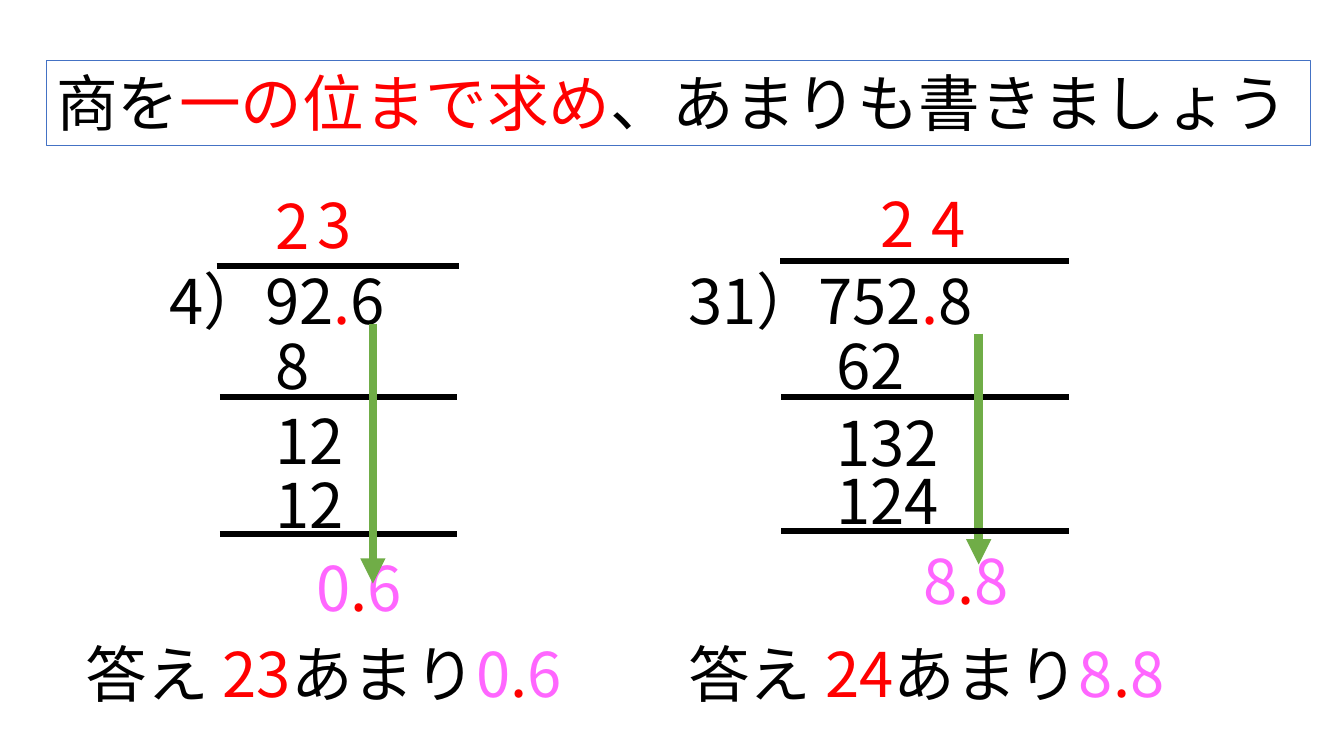
from pptx import Presentation
from pptx.dml.color import RGBColor
from pptx.enum.shapes import MSO_CONNECTOR
from pptx.oxml.ns import qn
from pptx.util import Pt
from lxml import etree

FONT = "Noto Sans CJK JP"
BLACK, RED, PINK, GREEN, BLUE = "000000", "FF0000", "FF66FF", "70AD47", "4472C4"
ROW_HEIGHT = 60.5
DIVIDEND_TOP = 184.3

deck = Presentation()
deck.slide_width, deck.slide_height = Pt(960), Pt(540)
slide = deck.slides.add_slide(deck.slide_layouts[6])


def write(left, top, width, *pieces):
    box = slide.shapes.add_textbox(Pt(left), Pt(top), Pt(width), Pt(ROW_HEIGHT))
    box.text_frame.word_wrap = True
    paragraph = box.text_frame.paragraphs[0]
    paragraph.line_spacing = Pt(52.5)
    paragraph.font.size = Pt(44)
    paragraph.font.name = FONT
    etree.SubElement(paragraph.font._element, qn("a:ea"), typeface=FONT)
    for words, color in pieces:
        run = paragraph.add_run()
        run.text = words
        run.font.color.rgb = RGBColor.from_string(color)
    return box


def draw_line(x1, y1, x2, y2, color=BLACK, weight=4.5):
    line = slide.shapes.add_connector(
        MSO_CONNECTOR.STRAIGHT, Pt(x1), Pt(y1), Pt(x2), Pt(y2))
    line.line.color.rgb = RGBColor.from_string(color)
    line.line.width = Pt(weight)
    etree.SubElement(line._element.spPr, qn("a:effectLst"))
    return line


instruction = write(33, 43.2, 903, ("商を", BLACK), ("一の位まで求め", RED),
                    ("、あまりも書きましょう", BLACK))
instruction.line.color.rgb = RGBColor.from_string(BLUE)
instruction.line.width = Pt(0.75)

divisions = [
    {
        "dividend": (113.8, "4）92", "6"),
        "quotient": [(189.4, 131, "2"), (219.6, 130.3, "3")],
        "steps": [(189.4, 231.1, 46, "8"), (189.4, 284.4, 77, "12"),
                  (189.4, 330.5, 77, "12")],
        "remainder": (218.9, 389.5, "0", "6"),
        "answer": (54, "23"),
        "rules_under": [(154.8, 190.1, 327.6), (157, 283.7, 326.2),
                        (157, 381.6, 326.2)],
        "arrow": (266.4, 231.1, 416.9),
        "rules_over": [],
    },
    {
        "dividend": (484.6, "31）752", "8"),
        "quotient": [(622.1, 129.6, "2"), (658.1, 129.6, "4")],
        "steps": [(590.4, 231.1, 77, "62"), (590.4, 285.8, 109.4, "132"),
                  (590.4, 327.6, 109.4, "124")],
        "remainder": (652.3, 384.5, "8", "8"),
        "answer": (484.6, "24"),
        "rules_under": [(557.3, 186.5, 763.9), (558, 283.7, 763.9)],
        "arrow": (699.1, 238.3, 403.2),
        "rules_over": [(558, 379.4, 763.9)],
    },
]

for division in divisions:
    for start, y, end in division["rules_under"]:
        draw_line(start, y, end, y)

    left, whole, tenths = division["dividend"]
    write(left, DIVIDEND_TOP, 264, (whole, BLACK), (".", RED), (tenths, BLACK))
    for left, top, digit in division["quotient"]:
        write(left, top, 46, (digit, RED))
    for left, top, width, number in division["steps"]:
        write(left, top, width, (number, BLACK))

    left, top, whole, tenths = division["remainder"]
    remainder = (whole, PINK), (".", RED), (tenths, PINK)
    write(left, top, 93.6, *remainder)
    left, quotient = division["answer"]
    write(left, 450.7, 393, ("答え ", BLACK), (quotient, RED),
          ("あまり", BLACK), *remainder)

    x, start, end = division["arrow"]
    arrow = draw_line(x, start, x, end, GREEN, 6)
    etree.SubElement(arrow.line._get_or_add_ln(), qn("a:tailEnd"), type="triangle")

    for start, y, end in division["rules_over"]:
        draw_line(start, y, end, y)

deck.save("out.pptx")
